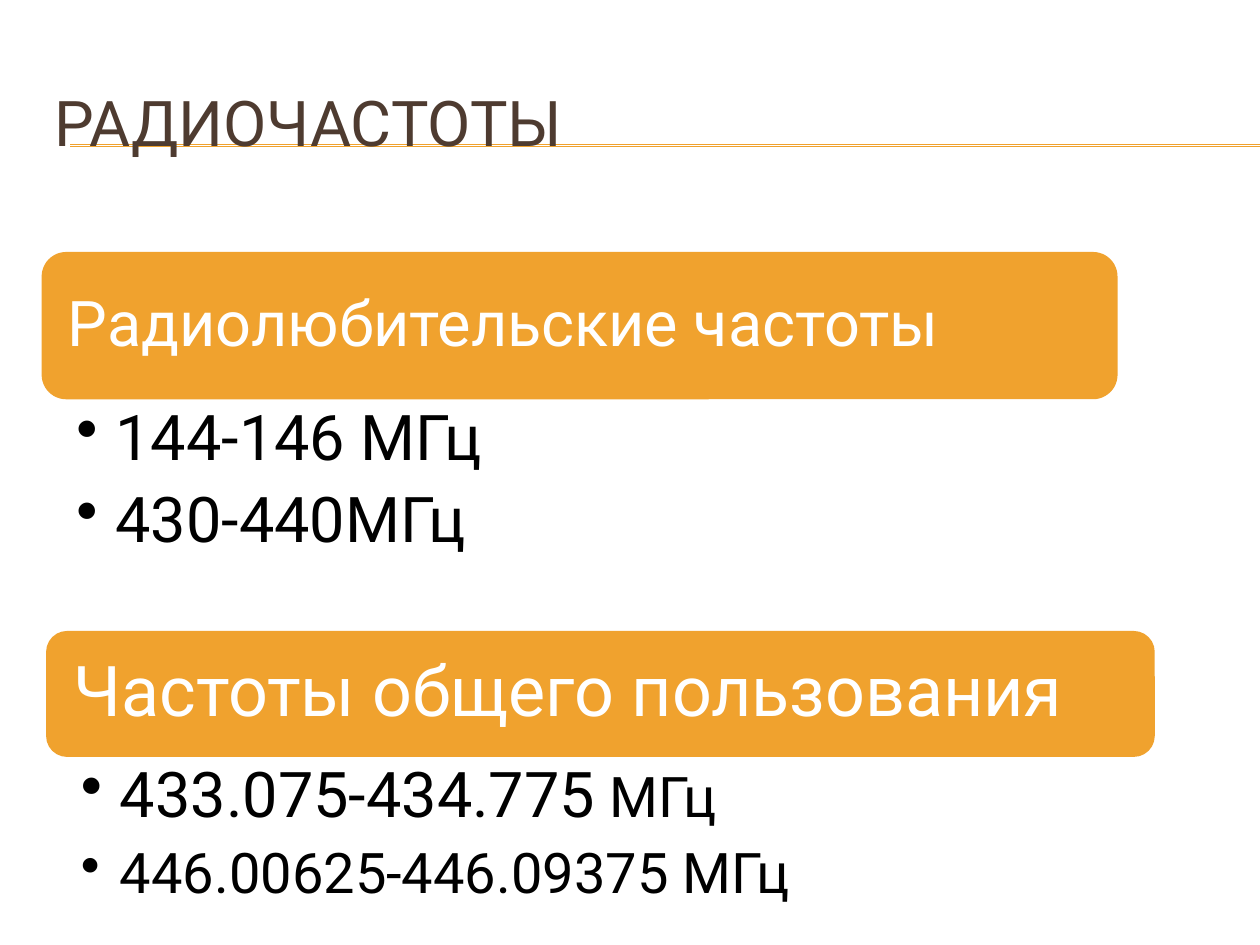
from lxml import etree
from pptx import Presentation
from pptx.dml.color import RGBColor
from pptx.enum.shapes import MSO_CONNECTOR, MSO_SHAPE
from pptx.enum.text import MSO_ANCHOR, PP_ALIGN
from pptx.oxml.ns import qn
from pptx.util import Cm, Pt

LINE = MSO_CONNECTOR.STRAIGHT
ROUND = MSO_SHAPE.ROUNDED_RECTANGLE
TOP, MIDDLE = MSO_ANCHOR.TOP, MSO_ANCHOR.MIDDLE
LEFT = PP_ALIGN.LEFT

FONT = "Roboto"
ORANGE, BROWN, WHITE, BLACK = "F0A22E", "4E3B30", "FFFFFF", "000000"
WIDE, HIGH = 25.4, 19.05


def color(code):
    return RGBColor.from_string(code)


def add_runs(para, runs, tint=BLACK, spacing=None, after=0):
    """Fill a paragraph with (text, size) runs."""
    para.alignment = LEFT
    para.space_after = Pt(after)
    if spacing:
        para.line_spacing = spacing
    for text, size in runs:
        run = para.add_run()
        run.text = text
        run.font.name = FONT
        run.font.size = Pt(size)
        run.font.color.rgb = color(tint)


def set_frame(frame, anchor, side, edge):
    frame.word_wrap = True
    frame.vertical_anchor = anchor
    frame.margin_left = frame.margin_right = Cm(side)
    frame.margin_top = frame.margin_bottom = Cm(edge)


def add_bullet(para, indent=0.79):
    props = para._p.get_or_add_pPr()
    props.set("marL", str(Cm(indent)))
    props.set("indent", str(-Cm(indent)))
    etree.SubElement(props, qn("a:buChar")).set("char", "•")


def add_header(slide, left, top, width, height, text):
    # Double rule running to the right edge, behind the title
    for drop in (1.65, 1.68):
        rule = slide.shapes.add_connector(
            LINE, Cm(left + 0.58), Cm(top + drop), Cm(WIDE), Cm(top + drop))
        rule.line.color.rgb = color(ORANGE)
        rule.line.width = Pt(0.75)
        etree.SubElement(rule._element.spPr, qn("a:effectLst"))
    # Title
    box = slide.shapes.add_textbox(Cm(left), Cm(top), Cm(width), Cm(height))
    set_frame(box.text_frame, MIDDLE, 0.25, 0.13)
    add_runs(box.text_frame.paragraphs[0], [(text, 36)], tint=BROWN)


def add_group(slide, left, top, width, bar, body, label, size, inset, items):
    # Coloured heading bar
    head = slide.shapes.add_shape(ROUND, Cm(left), Cm(top), Cm(width), Cm(bar))
    head.shadow.inherit = False
    head.fill.solid()
    head.fill.fore_color.rgb = color(ORANGE)
    head.line.fill.background()
    set_frame(head.text_frame, MIDDLE, inset, inset)
    add_runs(head.text_frame.paragraphs[0], [(label, size)],
             tint=WHITE, spacing=0.9)
    # Bulleted frequencies below it
    box = slide.shapes.add_textbox(
        Cm(left), Cm(top + bar), Cm(width), Cm(body))
    frame = box.text_frame
    set_frame(frame, TOP, 0.7, 0.13)
    for index, runs in enumerate(items):
        para = frame.add_paragraph() if index else frame.paragraphs[0]
        add_runs(para, runs, spacing=0.9, after=8)
        add_bullet(para)


def main():
    deck = Presentation()
    deck.slide_width, deck.slide_height = Cm(WIDE), Cm(HIGH)
    slide = deck.slides.add_slide(deck.slide_layouts[6])

    add_header(slide, 0.84, 1.27, 24.13, 2.34, "РАДИОЧАСТОТЫ")
    add_group(slide, 0.84, 5.08, 21.69, 2.97, 3.2,
              "Pадиолюбительские частоты", 36, 0.38,
              [[("144-146 МГц", 36)], [("430-440МГц", 36)]])
    add_group(slide, 0.93, 12.72, 22.35, 2.54, 3,
              "Частоты общего пользования", 40, 0.43,
              [[("433.075-434.775", 36), (" МГц", 32)],
               [("446.00625-446.09375 МГц", 32)]])

    deck.save("out.pptx")


if __name__ == "__main__":
    main()
